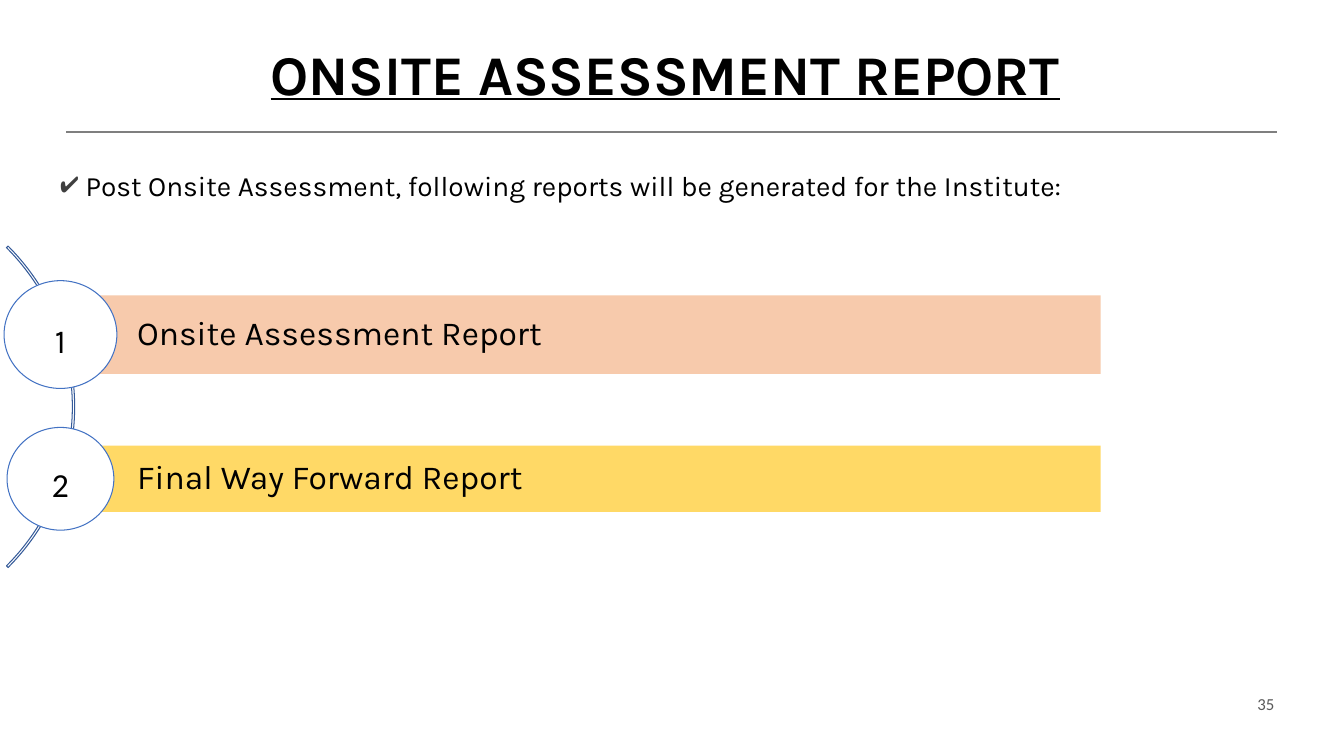
from dataclasses import dataclass

from lxml.etree import SubElement
from pptx import Presentation
from pptx.dml.color import RGBColor
from pptx.enum.shapes import MSO_CONNECTOR, MSO_SHAPE
from pptx.enum.text import MSO_ANCHOR, MSO_AUTO_SIZE, PP_ALIGN
from pptx.oxml.ns import qn
from pptx.util import Pt


@dataclass(frozen=True)
class Theme:
    ink: str = "000000"
    paper: str = "FFFFFF"
    rule: str = "7F7F7F"
    arc: str = "345A99"
    ring: str = "4372C3"
    peach: str = "F7CAAC"
    gold: str = "FFD966"
    tick: str = "3F3F3F"
    faint: str = "595959"
    font: str = "Karla"
    plain: str = "Calibri"
    head: int = 40
    body: int = 20
    label: int = 24
    small: int = 12


THEME = Theme()


def color(code):
    return RGBColor.from_string(code)


def put(frame, text, size=THEME.label, font=THEME.font, ink=THEME.ink,
        align=PP_ALIGN.LEFT, anchor=MSO_ANCHOR.MIDDLE, space=None,
        bold=False, under=False, bullet=None, inset=(7.2, 3.6, 7.2, 3.6)):
    frame.word_wrap = True
    frame.auto_size = MSO_AUTO_SIZE.NONE
    frame.vertical_anchor = anchor
    (frame.margin_left, frame.margin_top,
     frame.margin_right, frame.margin_bottom) = map(Pt, inset)
    para = frame.paragraphs[0]
    if bullet:
        mark(para, bullet)
    para.alignment = align
    if space:
        para.line_spacing = space
    run = para.add_run()
    run.text = text
    run.font.name = font
    run.font.size = Pt(size)
    run.font.bold = bold
    run.font.underline = under
    run.font.color.rgb = color(ink)


def mark(para, char):
    """Give the paragraph a hanging bullet."""
    props = para._p.get_or_add_pPr()
    props.set("marL", str(Pt(18)))
    props.set("indent", str(-Pt(18)))
    tint = SubElement(props, qn("a:buClr"))
    SubElement(tint, qn("a:srgbClr"), val=THEME.tick)
    SubElement(props, qn("a:buChar"), char=char)


def add_text(slide, box, text, **style):
    shape = slide.shapes.add_textbox(*map(Pt, box))
    put(shape.text_frame, text, **style)


def add_form(slide, kind, box, fill, line=None):
    shape = slide.shapes.add_shape(kind, *map(Pt, box))
    shape.shadow.inherit = False
    shape.fill.solid()
    shape.fill.fore_color.rgb = color(fill)
    if line:
        shape.line.color.rgb = color(line)
        shape.line.width = Pt(0.75)
    else:
        shape.line.fill.background()
    return shape


def add_title(slide, text):
    title = slide.shapes.title
    title.left, title.top, title.width, title.height = map(
        Pt, (42.5, 30.2, 865.4, 50.4))
    put(title.text_frame, text, size=THEME.head, bold=True, under=True,
        align=PP_ALIGN.CENTER, anchor=MSO_ANCHOR.BOTTOM, space=0.9)


def add_rule(slide, left, right, y):
    rule = slide.shapes.add_connector(
        MSO_CONNECTOR.STRAIGHT, Pt(left), Pt(y), Pt(right), Pt(y))
    rule.line.color.rgb = color(THEME.rule)
    rule.line.width = Pt(0.75)
    SubElement(rule._element.spPr, qn("a:effectLst"))


def add_arc(slide):
    arc = add_form(slide, MSO_SHAPE.BLOCK_ARC, (-271.4, 128.2, 324.7, 324.7),
                   THEME.paper, THEME.arc)
    for spot, value in enumerate((189, 27, 0.005)):
        arc.adjustments[spot] = value


def add_item(slide, digit, text, mid, tall, wide, high, fill, font):
    """Draw a bar and its numbered circle, both centred on the height mid."""
    left = 43.2
    bar = add_form(slide, MSO_SHAPE.RECTANGLE,
                   (left, mid - tall / 2, 743, tall), fill)
    put(bar.text_frame, text, space=0.9, inset=(54.7, 5, 5, 5))
    add_form(slide, MSO_SHAPE.OVAL,
             (left - wide / 2, mid - high / 2, wide, high),
             THEME.paper, THEME.ring)
    add_text(slide, (left - 24.5, mid - 16.5, 49, 41), digit,
             font=font, align=PP_ALIGN.CENTER)


def main():
    deck = Presentation()
    deck.slide_width, deck.slide_height = Pt(960), Pt(540)
    slide = deck.slides.add_slide(deck.slide_layouts[5])

    add_rule(slide, 47.5, 912.2, 94.3)
    add_title(slide, "ONSITE ASSESSMENT REPORT")
    add_text(slide, (36, 119.5, 752.4, 28.8),
             "Post Onsite Assessment, following reports will be generated "
             "for the Institute:",
             size=THEME.body, anchor=MSO_ANCHOR.TOP, space=0.9, bullet="✔")
    add_arc(slide)
    add_item(slide, "1", "Onsite Assessment Report", 239, 56.2, 80.6, 77,
             THEME.peach, THEME.font)
    add_item(slide, "2", "Final Way Forward Report", 342, 47.5, 76.3, 73.4,
             THEME.gold, THEME.plain)
    add_text(slide, (659.5, 488.2, 257.8, 28.8), "35", size=THEME.small,
             font=THEME.plain, ink=THEME.faint, align=PP_ALIGN.RIGHT)

    deck.save("out.pptx")


if __name__ == "__main__":
    main()
